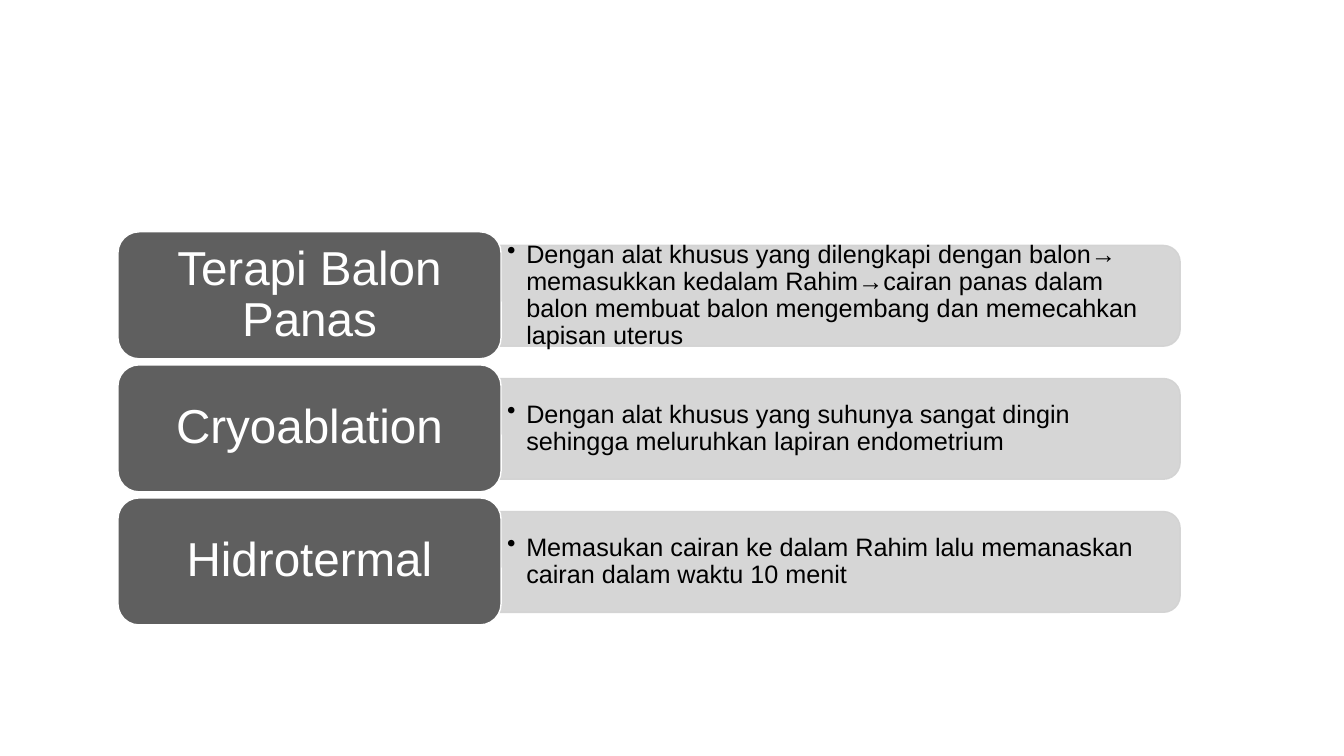
from dataclasses import dataclass

from pptx import Presentation
from pptx.dml.color import RGBColor
from pptx.enum.shapes import MSO_SHAPE
from pptx.enum.text import MSO_ANCHOR, PP_ALIGN
from pptx.oxml.ns import qn
from pptx.oxml.xmlchemy import OxmlElement
from pptx.util import Emu, Pt

EMU_PER_PX = 9144  # 100 px to the inch
FONT = "Arial"
WHITE, BLACK, DARK_GRAY, LIGHT_GRAY = "FFFFFF", "000000", "5F5F5F", "D2D2D2"

FIRST_TOP, ROW_PITCH = 230, 132
LABEL_LEFT, LABEL_WIDTH, LABEL_HEIGHT = 117, 380, 126
PANEL_LEFT, PANEL_LENGTH, PANEL_HEIGHT = 496, 675, 100
TEXT_WIDTH, TEXT_HEIGHT, TEXT_OFFSET = 670, 91, 18


@dataclass
class Therapy:
    name: str
    description: str


THERAPIES = [
    Therapy(
        "Terapi Balon Panas",
        "Dengan alat khusus yang dilengkapi dengan balon→ memasukkan kedalam "
        "Rahim→cairan panas dalam balon membuat balon mengembang dan memecahkan "
        "lapisan uterus",
    ),
    Therapy(
        "Cryoablation",
        "Dengan alat khusus yang suhunya sangat dingin sehingga meluruhkan "
        "lapiran endometrium",
    ),
    Therapy(
        "Hidrotermal",
        "Memasukan cairan ke dalam Rahim lalu memanaskan cairan dalam waktu 10 menit",
    ),
]


def px(length: int) -> Emu:
    return Emu(length * EMU_PER_PX)


def color(value: str) -> RGBColor:
    return RGBColor.from_string(value)


def add_box(slide, kind, left: int, top: int, width: int, height: int,
            fill: str, line: str):
    shape = slide.shapes.add_shape(kind, px(left), px(top), px(width), px(height))
    shape.shadow.inherit = False
    shape.fill.solid()
    shape.fill.fore_color.rgb = color(fill)
    shape.line.color.rgb = color(line)
    shape.line.width = Pt(1)
    return shape


def write_text(shape, text: str, size: int, text_color: str,
               side_inset: int, end_inset: int):
    """Fill the shape with one paragraph, centred vertically."""
    frame = shape.text_frame
    frame.word_wrap = True
    frame.vertical_anchor = MSO_ANCHOR.MIDDLE
    frame.margin_left = frame.margin_right = px(side_inset)
    frame.margin_top = frame.margin_bottom = px(end_inset)
    paragraph = frame.paragraphs[0]
    paragraph.line_spacing = 0.9
    run = paragraph.add_run()
    run.text = text
    run.font.name = FONT
    run.font.size = Pt(size)
    run.font.color.rgb = color(text_color)
    return paragraph


def add_bullet(paragraph, indent: int) -> None:
    properties = paragraph._p.get_or_add_pPr()
    properties.set("marL", str(px(indent)))
    properties.set("indent", str(-px(indent)))
    bullet = OxmlElement("a:buChar")
    bullet.set("char", "•")
    properties.append(bullet)


def set_opacity(shape, percent: int) -> None:
    for element in shape._element.spPr.iter(qn("a:srgbClr")):
        alpha = OxmlElement("a:alpha")
        alpha.set("val", str(percent * 1000))
        element.append(alpha)


def add_panel(slide, top: int, description: str) -> None:
    # The bar is upright, then turned so its rounded end points right
    middle_x = PANEL_LEFT + PANEL_LENGTH // 2
    middle_y = top + LABEL_HEIGHT // 2
    bar = add_box(slide, MSO_SHAPE.ROUND_2_SAME_RECTANGLE,
                  middle_x - PANEL_HEIGHT // 2, middle_y - PANEL_LENGTH // 2,
                  PANEL_HEIGHT, PANEL_LENGTH, LIGHT_GRAY, LIGHT_GRAY)
    bar.rotation = 90
    set_opacity(bar, 90)

    # Level text on the bar
    box = slide.shapes.add_textbox(px(PANEL_LEFT), px(top + TEXT_OFFSET),
                                   px(TEXT_WIDTH), px(TEXT_HEIGHT))
    paragraph = write_text(box, description, 18, BLACK, 7, 4)
    paragraph.alignment = PP_ALIGN.LEFT
    paragraph.level = 1
    add_bullet(paragraph, 19)


def add_label(slide, top: int, name: str) -> None:
    label = add_box(slide, MSO_SHAPE.ROUNDED_RECTANGLE, LABEL_LEFT, top,
                    LABEL_WIDTH, LABEL_HEIGHT, DARK_GRAY, WHITE)
    write_text(label, name, 34, WHITE, 14, 7).alignment = PP_ALIGN.CENTER


def main() -> None:
    presentation = Presentation()
    presentation.slide_width = px(1333)
    presentation.slide_height = px(750)
    slide = presentation.slides.add_slide(presentation.slide_layouts[6])

    # One row for each therapy, the label over the panel's left edge
    for row, therapy in enumerate(THERAPIES):
        top = FIRST_TOP + row * ROW_PITCH
        add_panel(slide, top, therapy.description)
        add_label(slide, top, therapy.name)

    presentation.save("out.pptx")


if __name__ == "__main__":
    main()
